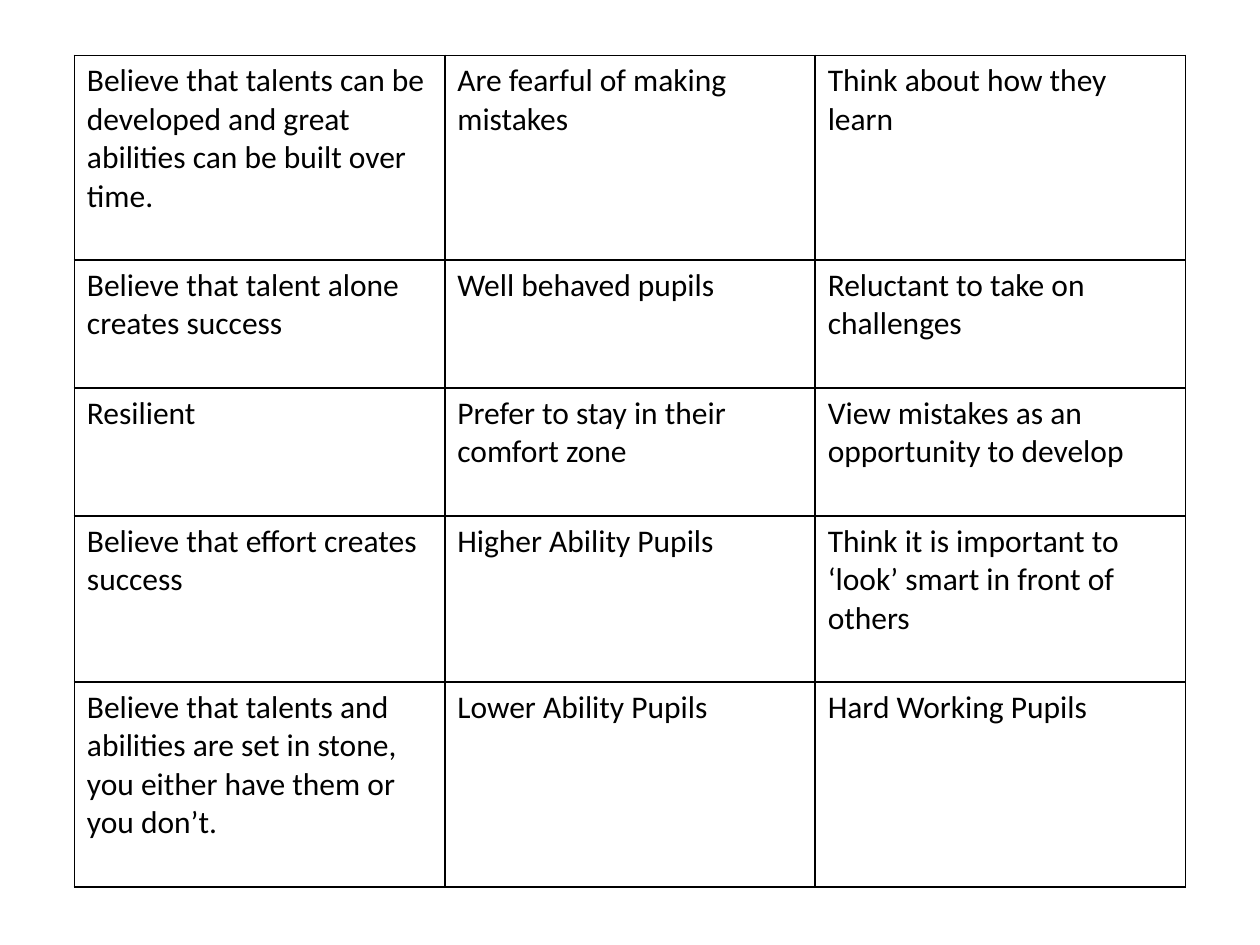
from lxml.etree import SubElement
from pptx import Presentation
from pptx.dml.color import RGBColor
from pptx.oxml.ns import qn
from pptx.util import Inches, Pt

INK, PAPER = "000000", "FFFFFF"
FONT, FONT_SIZE = "Calibri", 18
LINE_HEIGHT, CELL_PADDING = 0.305, 0.1

# Each row: the lines its longest statement takes, then its three statements.
STATEMENTS = [
    (4, "Believe that talents can be developed and great abilities can be built over time.",
     "Are fearful of making mistakes",
     "Think about how they learn"),
    (2, "Believe that talent alone creates success",
     "Well behaved pupils",
     "Reluctant to take on challenges"),
    (2, "Resilient",
     "Prefer to stay in their comfort zone",
     "View mistakes as an opportunity to develop"),
    (3, "Believe that effort creates success",
     "Higher Ability Pupils",
     "Think it is important to ‘look’ smart in front of others"),
    (4, "Believe that talents and abilities are set in stone, you either have them or you don’t.",
     "Lower Ability Pupils",
     "Hard Working Pupils"),
]


def color(value):
    return RGBColor.from_string(value)


def add_borders(cell, value, points):
    properties = cell._tc.get_or_add_tcPr()
    for side in ("lnL", "lnR", "lnT", "lnB"):
        line = SubElement(properties, qn(f"a:{side}"), w=str(Pt(points)))
        fill = SubElement(line, qn("a:solidFill"))
        SubElement(fill, qn("a:srgbClr"), val=value)


def fill_cell(cell, text):
    add_borders(cell, INK, 1)
    cell.fill.solid()
    cell.fill.fore_color.rgb = color(PAPER)
    span = cell.text_frame.paragraphs[0].add_run()
    span.text = text
    span.font.name = FONT
    span.font.size = Pt(FONT_SIZE)
    span.font.bold = False
    span.font.color.rgb = color(INK)


def add_statement_table(page, left, top, width):
    """Place the statement cards, each row leaving one free line below its text."""
    heights = [Inches((lines + 1) * LINE_HEIGHT + CELL_PADDING)
               for lines, *_ in STATEMENTS]
    columns = len(STATEMENTS[0]) - 1
    table = page.shapes.add_table(len(STATEMENTS), columns, left, top,
                                  width, sum(heights)).table
    table.first_row = table.horz_banding = False
    for row, height, (_, *texts) in zip(table.rows, heights, STATEMENTS):
        row.height = height
        for cell, text in zip(row.cells, texts):
            fill_cell(cell, text)


def main():
    deck = Presentation()
    deck.slide_width, deck.slide_height = Inches(10), Inches(7.5)
    page = deck.slides.add_slide(deck.slide_layouts[6])
    margin = Inches(0.59)
    add_statement_table(page, margin, Inches(0.44), deck.slide_width - 2 * margin)
    deck.save("out.pptx")


if __name__ == "__main__":
    main()
